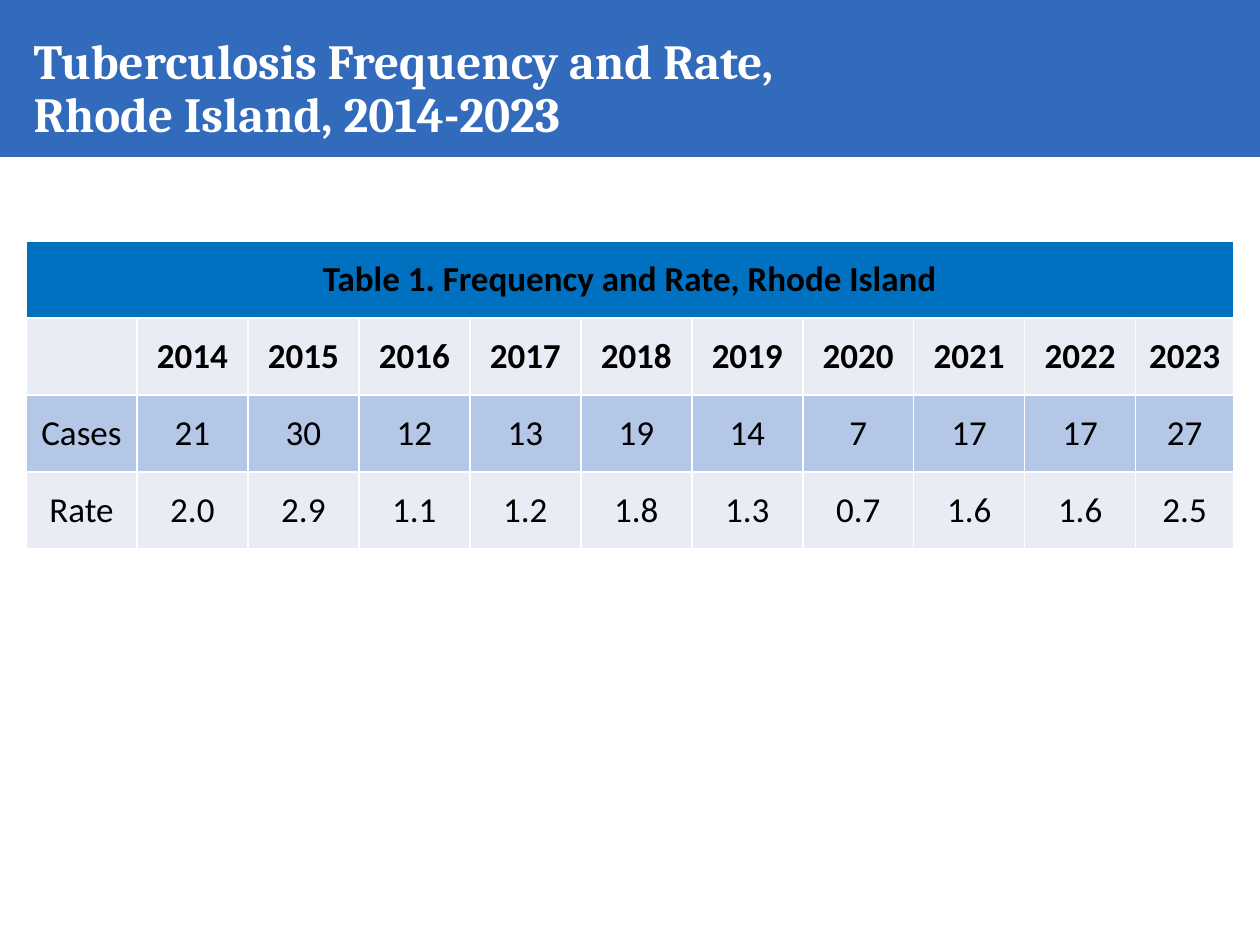
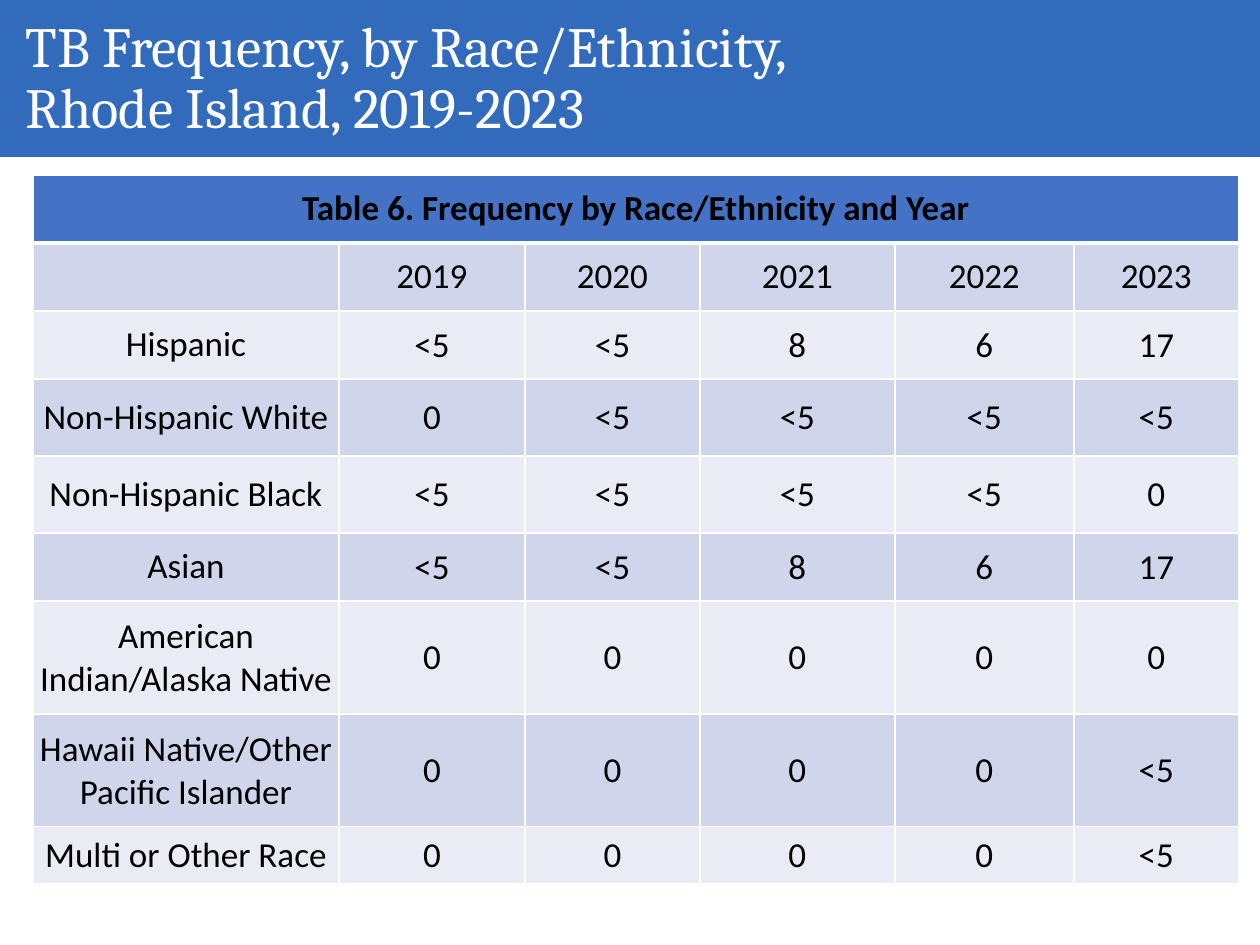
"""Build two slides of tuberculosis tables for Rhode Island."""
from copy import deepcopy

from lxml.etree import SubElement
from pptx import Presentation
from pptx.dml.color import RGBColor
from pptx.enum.shapes import MSO_SHAPE
from pptx.enum.text import MSO_ANCHOR, PP_ALIGN
from pptx.oxml.ns import qn
from pptx.util import Emu, Pt

PX_PER_INCH = 126
SLIDE_WIDTH, SLIDE_HEIGHT = 1260, 945
BAND_HEIGHT = 157
BAND, WHITE, BLACK = "326ABC", "FFFFFF", "000000"
TITLE_FONT, BODY_FONT = "Cambria", "Calibri"
ROOMY_MARGINS, TIGHT_MARGINS = (9, 5, 9, 5), (1, 1, 1, 0)

SLIDES = [
    {
        "title": ["Tuberculosis Frequency and Rate,", "Rhode Island, 2014-2023"],
        "title_box": (21, 0, 1008, 130),
        "title_inset": 37,
        "title_format": {"size": 28, "bold": True},
        "table_at": (26, 241),
        "columns": [111] * 10 + [98],
        "rows": [77] * 4,
        "caption": "Table 1. Frequency and Rate, Rhode Island",
        "body": [
            ["", *map(str, range(2014, 2024))],
            ["Cases", "21", "30", "12", "13", "19", "14", "7", "17", "17", "27"],
            ["Rate", "2.0", "2.9", "1.1", "1.2", "1.8", "1.3", "0.7", "1.6", "1.6", "2.5"],
        ],
        "caption_fill": "0070C0",
        "body_fills": ["E9EBF5", "B4C7E7"],
        "bold_rows": 2,
        "roomy_rows": 0,
        "roomy_labels": 0,
        "caption_line": 1,
    },
    {
        "title": ["TB Frequency, by Race/Ethnicity,", "Rhode Island, 2019-2023"],
        "title_box": (13, 14, 1152, 130),
        "title_inset": 4,
        "title_format": {"size": 32.4},
        "table_at": (33, 175),
        "columns": [306, 186, 175, 195, 179, 165],
        "rows": [68, 68, 68, 77, 77, 68, 113, 113, 57],
        "caption": "Table 6. Frequency by Race/Ethnicity and Year",
        "body": [
            ["", *map(str, range(2019, 2024))],
            ["Hispanic", "<5", "<5", "8", "6", "17"],
            ["Non-Hispanic White", "0", "<5", "<5", "<5", "<5"],
            ["Non-Hispanic Black", "<5", "<5", "<5", "<5", "0"],
            ["Asian", "<5", "<5", "8", "6", "17"],
            ["American Indian/Alaska Native", "0", "0", "0", "0", "0"],
            ["Hawaii Native/Other Pacific Islander", "0", "0", "0", "0", "<5"],
            ["Multi or Other Race", "0", "0", "0", "0", "<5"],
        ],
        "caption_fill": "4472C4",
        "body_fills": ["CFD5EA", "E9EBF5"],
        "bold_rows": 1,
        "roomy_rows": 2,
        "roomy_labels": 6,
        "caption_line": 3,
    },
]


def px(length):
    """Turn pixels into EMU."""
    return Emu(round(length * 914400 / PX_PER_INCH))


def color(hex_text):
    """Turn a hex string into a colour."""
    return RGBColor.from_string(hex_text)


def write(frame, lines, font=BODY_FONT, size=20, fill=BLACK, bold=False,
          align=None, spacing=None):
    """Write lines into one formatted paragraph, parted by line breaks."""
    paragraph = frame.paragraphs[0]
    paragraph.alignment = align
    paragraph.line_spacing = spacing
    for index, line in enumerate(lines):
        if index:
            paragraph.add_line_break()
        run = paragraph.add_run()
        run.text = line
        run.font.name = font
        run.font.size = Pt(size)
        run.font.bold = bold
        run.font.color.rgb = color(fill)
    for line_break in paragraph._p.findall(qn("a:br")):
        line_break.append(deepcopy(run._r.rPr))


def add_band(slide):
    """Put the title band on the layout that the slides share."""
    band = slide.shapes.add_shape(MSO_SHAPE.RECTANGLE, 0, 0, px(SLIDE_WIDTH), px(BAND_HEIGHT))
    band.shadow.inherit = False
    band.fill.solid()
    band.fill.fore_color.rgb = color(BAND)
    band.line.fill.background()
    slide.slide_layout.shapes._spTree.insert(2, band._element)


def add_title(slide, content):
    """Place and format the title placeholder."""
    title = slide.shapes.title
    title.left, title.top, title.width, title.height = map(px, content["title_box"])
    frame = title.text_frame
    frame.word_wrap = True
    frame.vertical_anchor = MSO_ANCHOR.TOP
    frame.margin_top = px(content["title_inset"])
    write(frame, content["title"], font=TITLE_FONT, fill=WHITE, align=PP_ALIGN.LEFT,
          spacing=0.9, **content["title_format"])


def set_borders(cell, top, bottom):
    """Draw white borders, with top and bottom widths in points."""
    properties = cell._tc.get_or_add_tcPr()
    for side, width in (("L", 1), ("R", 1), ("T", top), ("B", bottom)):
        line = SubElement(properties, qn(f"a:ln{side}"), w=str(Pt(width)))
        fill = SubElement(line, qn("a:solidFill"))
        SubElement(fill, qn("a:srgbClr"), val=WHITE)


def format_cell(cell, text, row, column, content):
    """Fill, border and write one table cell."""
    caption_line = content["caption_line"]
    set_borders(cell, caption_line if row == 1 else 1, caption_line if row == 0 else 1)
    body_fills = content["body_fills"]
    cell.fill.solid()
    cell.fill.fore_color.rgb = color(
        body_fills[(row - 1) % len(body_fills)] if row else content["caption_fill"])
    roomy = row < content["roomy_rows"] or (column == 0 and row < content["roomy_labels"])
    (cell.margin_left, cell.margin_top, cell.margin_right, cell.margin_bottom) = map(
        px, ROOMY_MARGINS if roomy else TIGHT_MARGINS)
    cell.vertical_anchor = MSO_ANCHOR.MIDDLE
    if text:
        write(cell.text_frame, [text], bold=row < content["bold_rows"], align=PP_ALIGN.CENTER)


def add_data_table(slide, content):
    """Add the table with its caption row across all columns."""
    columns, rows = content["columns"], content["rows"]
    left, top = content["table_at"]
    table = slide.shapes.add_table(len(rows), len(columns), px(left), px(top),
                                   px(sum(columns)), px(sum(rows))).table
    table.first_row = table.horz_banding = False
    for column, width in zip(table.columns, columns):
        column.width = px(width)
    for row, height in zip(table.rows, rows):
        row.height = px(height)
    table.cell(0, 0).merge(table.cell(0, len(columns) - 1))
    caption_row = [content["caption"]] + [""] * (len(columns) - 1)
    for row, texts in enumerate([caption_row, *content["body"]]):
        for column, text in enumerate(texts):
            format_cell(table.cell(row, column), text, row, column, content)


def main():
    """Build and save the presentation."""
    presentation = Presentation()
    presentation.slide_width, presentation.slide_height = px(SLIDE_WIDTH), px(SLIDE_HEIGHT)
    title_only = presentation.slide_layouts[5]
    for index, content in enumerate(SLIDES):
        slide = presentation.slides.add_slide(title_only)
        if index == 0:
            add_band(slide)
        add_title(slide, content)
        add_data_table(slide, content)
    presentation.save("out.pptx")


if __name__ == "__main__":
    main()
